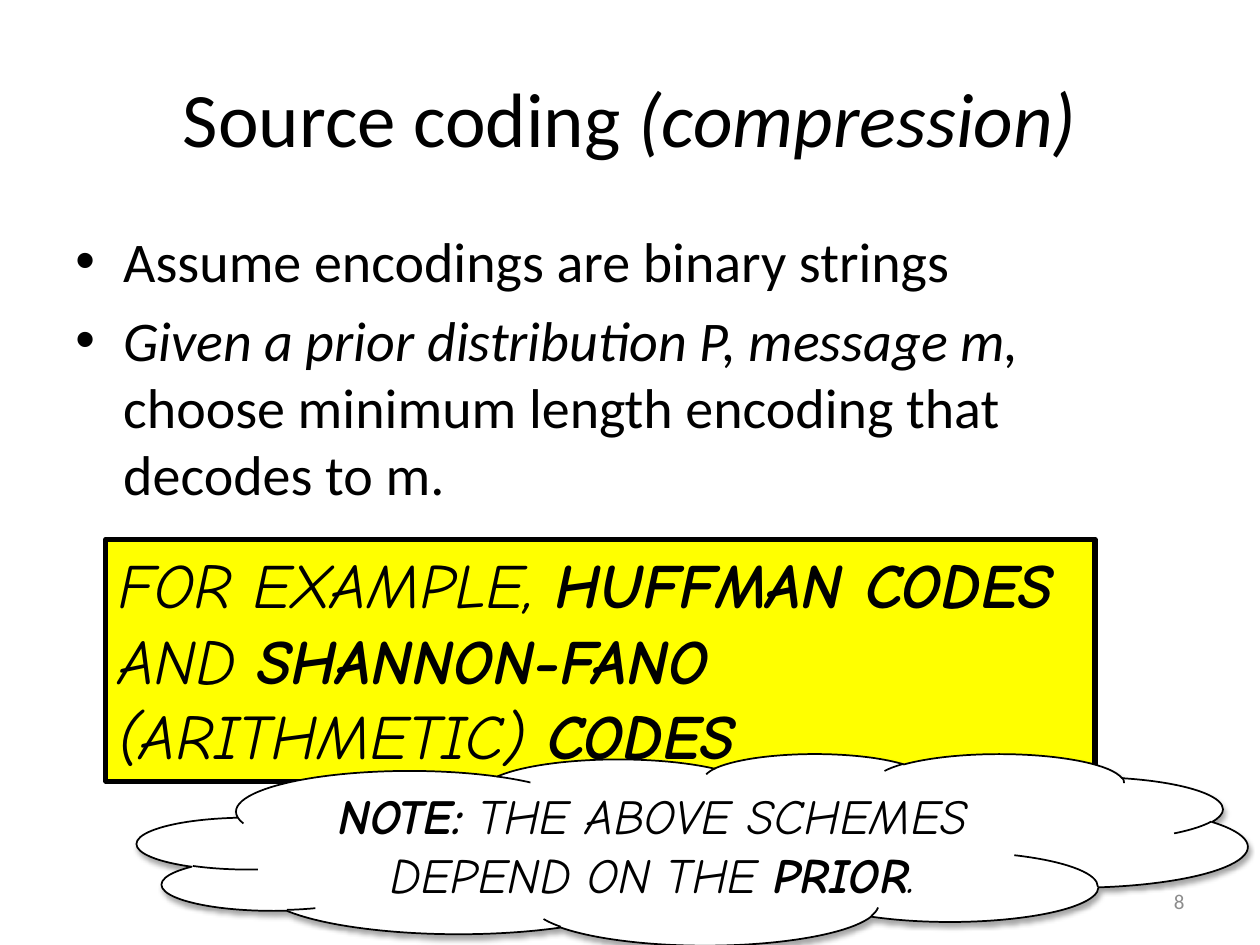
from dataclasses import dataclass
from lxml.etree import SubElement
from pptx import Presentation
from pptx.dml.color import RGBColor
from pptx.enum.shapes import MSO_SHAPE as Shape
from pptx.enum.text import MSO_ANCHOR as Anchor, PP_ALIGN as Align
from pptx.oxml.ns import qn
from pptx.util import Inches, Pt

COLORS = {"ink": "000000", "number": "8C8C8C", "example": "FFFF00", "cloud": "FFFFFF"}


@dataclass
class SlideBuilder:
    """Holds the slide and its fonts, and adds each kind of element."""
    slide: object
    body_font: str = "Calibri"
    note_font: str = "Comic Neue"

    def add_runs(self, paragraph, runs, size, font, color="ink"):
        for text, style in runs:
            if text == "\n":
                paragraph.add_line_break()
                continue
            run = paragraph.add_run()
            run.text = text
            run.font.name = font
            run.font.size = Pt(size)
            run.font.bold = "b" in style
            run.font.italic = "i" in style
            run.font.color.rgb = RGBColor.from_string(COLORS[color])

    def text_box(self, box, anchor):
        frame = self.slide.shapes.add_textbox(*map(Inches, box)).text_frame
        frame.word_wrap = True
        frame.vertical_anchor = anchor
        return frame

    def text(self, box, runs, size, align, color="ink"):
        paragraph = self.text_box(box, Anchor.MIDDLE).paragraphs[0]
        paragraph.alignment = align
        self.add_runs(paragraph, runs, size, self.body_font, color)

    def bullets(self, box, items, size):
        frame = self.text_box(box, Anchor.TOP)
        for index, runs in enumerate(items):
            paragraph = frame.add_paragraph() if index else frame.paragraphs[0]
            paragraph.space_before = Pt(size * 0.2)
            properties = paragraph._p.get_or_add_pPr()
            properties.set("marL", str(Inches(0.38)))
            properties.set("indent", str(Inches(-0.38)))
            SubElement(properties, qn("a:buFont"), typeface="Arial")
            SubElement(properties, qn("a:buChar"), char="•")
            self.add_runs(paragraph, runs, size, self.body_font)

    def callout(self, kind, box, fill, line_width, runs, size, align, anchor):
        shape = self.slide.shapes.add_shape(kind, *map(Inches, box))
        shape.shadow.inherit = False
        shape.fill.solid()
        shape.fill.fore_color.rgb = RGBColor.from_string(COLORS[fill])
        shape.line.color.rgb = RGBColor.from_string(COLORS["ink"])
        shape.line.width = Pt(line_width)
        frame = shape.text_frame
        frame.word_wrap = True
        frame.vertical_anchor = anchor
        frame.paragraphs[0].alignment = align
        self.add_runs(frame.paragraphs[0], runs, size, self.note_font)
        return shape

    def cloud(self, box, runs, size):
        shape = self.callout(Shape.CLOUD, box, "cloud", 1, runs, size, Align.CENTER, Anchor.MIDDLE)
        frame = shape.text_frame
        frame.margin_left = frame.margin_right = frame.margin_top = frame.margin_bottom = 0
        effects = shape._element.spPr.find(qn("a:effectLst"))
        shadow = SubElement(effects, qn("a:outerShdw"), blurRad=str(Pt(3.1)),
                            dist=str(Pt(1.8)), dir="5400000", rotWithShape="0")
        color = SubElement(shadow, qn("a:srgbClr"), val=COLORS["ink"])
        SubElement(color, qn("a:alpha"), val="35000")


def main():
    presentation = Presentation()
    presentation.slide_width, presentation.slide_height = Inches(10), Inches(7.5)
    builder = SlideBuilder(presentation.slides.add_slide(presentation.slide_layouts[6]))

    builder.text((0.5, 0.3, 9, 1.25), [("Source coding ", ""), ("(compression)", "i")],
                 44, Align.CENTER)
    builder.bullets((0.5, 1.75, 9, 4.95), [
        [("Assume encodings are binary strings", "")],
        [("Given a prior distribution P, message m,", "i"), ("\n", ""),
         ("choose minimum length encoding that decodes to m.", "")],
    ], 32)
    builder.text((7.17, 6.95, 2.33, 0.4), [("8", "")], 12, Align.RIGHT, "number")
    builder.callout(Shape.RECTANGLE, (0.84, 4.28, 7.85, 1.92), "example", 3, [
        ("FOR EXAMPLE, ", "i"), ("HUFFMAN CODES", "bi"), (" AND ", "i"),
        ("SHANNON-FANO", "bi"), (" (ARITHMETIC) ", "i"), ("CODES", "bi"),
    ], 36, Align.LEFT, Anchor.TOP)
    builder.cloud((1.09, 5.98, 8.81, 1.52), [
        ("NOTE:", "bi"), (" THE ABOVE SCHEMES DEPEND ON THE ", "i"),
        ("PRIOR", "bi"), (".", "i"),
    ], 28)
    presentation.save("out.pptx")


if __name__ == "__main__":
    main()
